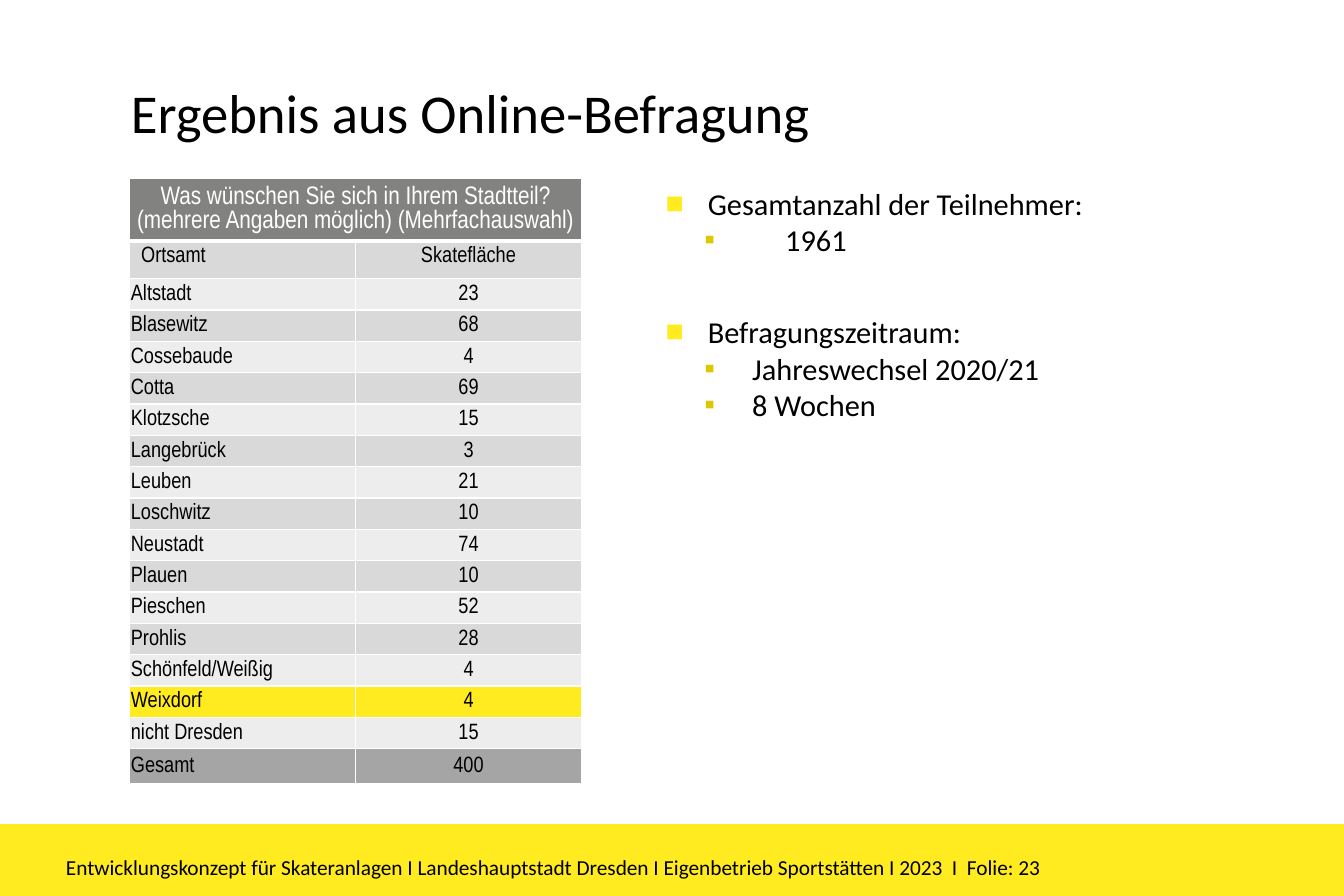
from lxml import etree
from pptx import Presentation
from pptx.dml.color import RGBColor
from pptx.enum.shapes import MSO_SHAPE
from pptx.enum.text import MSO_ANCHOR, MSO_AUTO_SIZE, PP_ALIGN
from pptx.oxml.ns import qn
from pptx.util import Inches, Pt

RECTANGLE = MSO_SHAPE.RECTANGLE
TOP, MIDDLE = MSO_ANCHOR.TOP, MSO_ANCHOR.MIDDLE
LEFT, CENTER = PP_ALIGN.LEFT, PP_ALIGN.CENTER
NO_AUTOFIT = MSO_AUTO_SIZE.NONE

BLACK = RGBColor(0x00, 0x00, 0x00)
WHITE = RGBColor(0xFF, 0xFF, 0xFF)
YELLOW = RGBColor(0xFF, 0xEB, 0x20)
DARK_YELLOW = RGBColor(0xDC, 0xC8, 0x00)
HEADER_GRAY = RGBColor(0x82, 0x83, 0x81)
TOTAL_GRAY = RGBColor(0xA5, 0xA5, 0xA5)
BAND_GRAY = RGBColor(0xD8, 0xD9, 0xD8)
LIGHT_GRAY = RGBColor(0xED, 0xED, 0xED)

SLIDE_WIDTH, SLIDE_HEIGHT = 11.81, 7.87
TEXT_FONT, TABLE_FONT = "Calibri", "Arial Narrow"

TABLE_TITLE = "Was wünschen Sie sich in Ihrem Stadtteil? (mehrere Angaben möglich) (Mehrfachauswahl)"
COLUMN_HEADS = ("Ortsamt", "Skatefläche")
DISTRICTS = [
    ("Altstadt", 23), ("Blasewitz", 68), ("Cossebaude", 4), ("Cotta", 69),
    ("Klotzsche", 15), ("Langebrück", 3), ("Leuben", 21), ("Loschwitz", 10),
    ("Neustadt", 74), ("Plauen", 10), ("Pieschen", 52), ("Prohlis", 28),
    ("Schönfeld/Weißig", 4), ("Weixdorf", 4), ("nicht Dresden", 15),
]
TOTAL = ("Gesamt", 400)
HIGHLIGHTED_DISTRICT = "Weixdorf"

SURVEY_FACTS = [
    ("Gesamtanzahl der Teilnehmer:", 0, 0.37, 0),
    ("1961", 1, 1.05, 0),
    ("Befragungszeitraum:", 0, 0.37, 33),
    ("Jahreswechsel 2020/21", 1, 0.76, 0),
    ("8 Wochen", 1, 0.76, 0),
]
BULLETS = [("■", YELLOW, 0, 1.1), ("▪", DARK_YELLOW, 0.34, 1.0)]


def place(shape, left, top, width, height):
    shape.left, shape.top = Inches(left), Inches(top)
    shape.width, shape.height = Inches(width), Inches(height)


def set_margins(target, left, top, right, bottom):
    target.margin_left, target.margin_top = Inches(left), Inches(top)
    target.margin_right, target.margin_bottom = Inches(right), Inches(bottom)


def add_text(paragraph, text, size, color=BLACK, font_name=TEXT_FONT, alignment=LEFT):
    paragraph.alignment = alignment
    run = paragraph.add_run()
    run.text = text
    run.font.name = font_name
    run.font.size = Pt(size)
    run.font.color.rgb = color


def set_bullet(paragraph, character, color, bullet_left, text_left):
    properties = paragraph._p.get_or_add_pPr()
    properties.set("marL", str(Inches(text_left)))
    properties.set("indent", str(Inches(bullet_left - text_left)))
    bullet_color = etree.SubElement(properties, qn("a:buClr"))
    etree.SubElement(bullet_color, qn("a:srgbClr"), val=str(color))
    etree.SubElement(properties, qn("a:buChar"), char=character)


def set_borders(cell, bottom_width=1):
    properties = cell._tc.get_or_add_tcPr()
    for side, width in (("L", 1), ("R", 1), ("T", 1), ("B", bottom_width)):
        line = etree.SubElement(properties, qn(f"a:ln{side}"), w=str(Pt(width)))
        fill = etree.SubElement(line, qn("a:solidFill"))
        etree.SubElement(fill, qn("a:srgbClr"), val=str(WHITE))


def fill_cell(cell, color):
    cell.fill.solid()
    cell.fill.fore_color.rgb = color


def add_title(slide, left, top, width, height):
    title = slide.shapes.title
    place(title, left, top, width, height)
    frame = title.text_frame
    frame.auto_size = NO_AUTOFIT
    frame.vertical_anchor = TOP
    paragraph = frame.paragraphs[0]
    paragraph.line_spacing = 0.9
    add_text(paragraph, "Ergebnis aus Online-Befragung", 34.6)


def add_survey_facts(slide, left, top, width, height):
    body = slide.placeholders[1]
    place(body, left, top, width, height)
    frame = body.text_frame
    frame.auto_size = NO_AUTOFIT
    frame.vertical_anchor = TOP
    set_margins(frame, 0, 0, 0, 0)
    for index, (text, level, text_left, space_before) in enumerate(SURVEY_FACTS):
        paragraph = frame.add_paragraph() if index else frame.paragraphs[0]
        character, color, bullet_left, line_spacing = BULLETS[level]
        paragraph.level = level
        paragraph.line_spacing = line_spacing
        paragraph.space_before = Pt(space_before)
        set_bullet(paragraph, character, color, bullet_left, text_left)
        add_text(paragraph, text, 19.2)


def district_color(index, name):
    if name == HIGHLIGHTED_DISTRICT:
        return YELLOW
    return BAND_GRAY if index % 2 else LIGHT_GRAY


def add_district_table(slide, left, top, width, height):
    title_height, head_height, total_height = 0.42, 0.29, 0.31
    district_height = (height - title_height - head_height - total_height) / len(DISTRICTS)
    rows = [COLUMN_HEADS, *DISTRICTS, TOTAL]
    colors = [BAND_GRAY]
    colors += [district_color(index, name) for index, (name, _) in enumerate(DISTRICTS)]
    colors.append(TOTAL_GRAY)
    heights = [title_height, head_height] + [district_height] * len(DISTRICTS) + [total_height]

    frame = slide.shapes.add_table(
        len(heights), 2, Inches(left), Inches(top), Inches(width), Inches(height))
    table = frame.table
    table.first_row = table.horz_banding = False
    for column in table.columns:
        column.width = Inches(width / 2)
    for row, row_height in zip(table.rows, heights):
        row.height = Inches(row_height)

    title_cell = table.cell(0, 0)
    title_cell.merge(table.cell(0, 1))
    title_cell.vertical_anchor = MIDDLE
    set_margins(title_cell, 0.01, 0.01, 0.01, 0)
    set_borders(title_cell, 3)
    fill_cell(title_cell, HEADER_GRAY)
    add_text(title_cell.text_frame.paragraphs[0], TABLE_TITLE, 16, WHITE, TABLE_FONT, CENTER)

    for row_index, (values, color) in enumerate(zip(rows, colors), start=1):
        for column_index, value in enumerate(values):
            cell = table.cell(row_index, column_index)
            if row_index > 1:
                cell.vertical_anchor = MIDDLE
                set_margins(cell, 0.01, 0.01, 0.01, 0)
            set_borders(cell)
            fill_cell(cell, color)
            alignment = CENTER if column_index else LEFT
            add_text(cell.text_frame.paragraphs[0], str(value), 14, BLACK, TABLE_FONT, alignment)


def add_footer(slide, left, top, width, height):
    band = slide.shapes.add_shape(
        RECTANGLE, Inches(left), Inches(top), Inches(width), Inches(height))
    band.shadow.inherit = False
    band.fill.solid()
    band.fill.fore_color.rgb = YELLOW
    band.line.fill.background()
    caption = slide.shapes.add_textbox(
        Inches(left + 0.58), Inches(top + 0.26), Inches(9.18), Inches(0.25))
    frame = caption.text_frame
    frame.word_wrap = True
    set_margins(frame, 0, 0, 0, 0)
    add_text(
        frame.paragraphs[0],
        "Entwicklungskonzept für Skateranlagen I Landeshauptstadt Dresden I "
        "Eigenbetrieb Sportstätten I 2023  I  Folie: 23",
        13.5)


def main():
    presentation = Presentation()
    presentation.slide_width = Inches(SLIDE_WIDTH)
    presentation.slide_height = Inches(SLIDE_HEIGHT)
    slide = presentation.slides.add_slide(presentation.slide_layouts[1])
    add_footer(slide, 0, 7.24, SLIDE_WIDTH, 0.63)
    add_title(slide, 1.05, 0.71, 10.02, 1.09)
    add_survey_facts(slide, 5.85, 1.59, 4.6, 3.92)
    add_district_table(slide, 1.14, 1.57, 3.97, 5.15)
    presentation.save("out.pptx")


if __name__ == "__main__":
    main()
